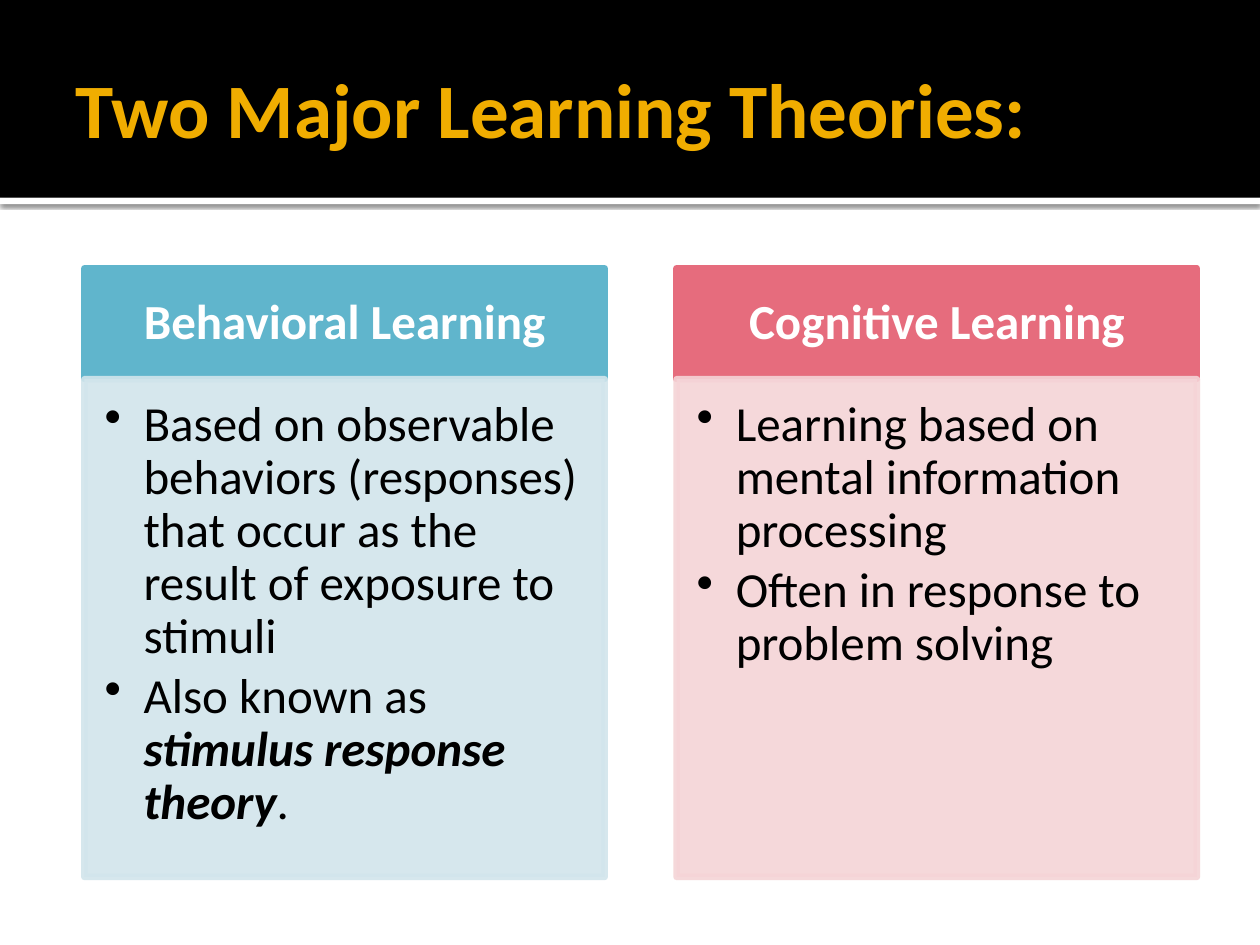
from dataclasses import dataclass

from lxml.etree import SubElement
from pptx import Presentation
from pptx.dml.color import RGBColor
from pptx.enum.shapes import MSO_SHAPE as Shape
from pptx.enum.text import MSO_ANCHOR as Anchor, PP_ALIGN as Align
from pptx.oxml.ns import qn
from pptx.util import Inches, Pt

FONT = "Calibri"
COLUMN_W, COLUMN_GAP = 4.13, 0.57
LEFT, HEAD_TOP, HEAD_H, BODY_H = 0.67, 2.13, 0.88, 3.95


@dataclass
class Run:
    text: str
    strong: bool = False


@dataclass
class Column:
    heading: str
    color: str
    tint: str
    bullets: list[list[Run]]


COLUMNS = [
    Column("Behavioral Learning", "60B5CC", "D2E5EC", [
        [Run("Based on observable behaviors (responses) that "
             "occur as the result of exposure to stimuli")],
        [Run("Also known as "), Run("stimulus response theory", True), Run(".")],
    ]),
    Column("Cognitive Learning", "E66C7D", "F5D4D7", [
        [Run("Learning based on mental information processing")],
        [Run("Often in response to problem solving")],
    ]),
]


def rgb(color: str) -> RGBColor:
    return RGBColor.from_string(color)


def add_rect(s, x: float, y: float, w: float, h: float, fill: str,
             line_pt: float = 0, opacity: int = 100):
    sp = s.shapes.add_shape(Shape.RECTANGLE, Inches(x), Inches(y), Inches(w), Inches(h))
    sp.shadow.inherit = False
    sp.fill.solid()
    sp.fill.fore_color.rgb = rgb(fill)
    if line_pt:
        sp.line.color.rgb = rgb(fill)
        sp.line.width = Pt(line_pt)
    else:
        sp.line.fill.background()
    if opacity < 100:
        for color in list(sp._element.spPr.iter(qn("a:srgbClr"))):
            SubElement(color, qn("a:alpha"), val=str(opacity * 1000))
    return sp


def add_shadow(sp) -> None:
    effects = sp._element.spPr.find(qn("a:effectLst"))
    shadow = SubElement(effects, qn("a:outerShdw"), blurRad=str(Pt(2.5)),
                        dist=str(Pt(0.8)), dir="5400000", rotWithShape="0")
    color = SubElement(shadow, qn("a:srgbClr"), val="000000")
    SubElement(color, qn("a:alpha"), val="60000")


def set_frame(sp, insets: tuple[float, float, float, float], anchor: Anchor):
    tf = sp.text_frame
    tf.word_wrap = True
    tf.vertical_anchor = anchor
    tf.margin_left, tf.margin_top, tf.margin_right, tf.margin_bottom = map(Inches, insets)
    return tf


def add_run(p, text: str, *, size: float = 28, color: str = "000000",
            bold: bool = False, italic: bool = False) -> None:
    r = p.add_run()
    r.text = text
    r.font.name, r.font.size = FONT, Pt(size)
    r.font.bold, r.font.italic = bold, italic
    r.font.color.rgb = rgb(color)


def add_bullet(p, runs: list[Run]) -> None:
    p.level = 1
    p.alignment = Align.LEFT
    p.line_spacing = 0.9
    p.space_after = Pt(4.2)
    pPr = p._p.get_or_add_pPr()
    pPr.set("marL", str(Inches(0.31)))
    pPr.set("indent", str(-Inches(0.31)))
    SubElement(pPr, qn("a:buChar"), char="•")
    for run in runs:
        add_run(p, run.text, bold=run.strong, italic=run.strong)


def add_column(s, x: float, column: Column) -> None:
    # Heading
    head = add_rect(s, x, HEAD_TOP, COLUMN_W, HEAD_H, column.color, 3.78)
    p = set_frame(head, (0.22, 0.12, 0.22, 0.12), Anchor.MIDDLE).paragraphs[0]
    p.alignment = Align.CENTER
    p.line_spacing = 0.9
    add_run(p, column.heading, color="FFFFFF", bold=True)

    # Bulleted body
    body = add_rect(s, x, HEAD_TOP + HEAD_H, COLUMN_W, BODY_H, column.tint, 3.78, 90)
    tf = set_frame(body, (0.16, 0.16, 0.22, 0.24), Anchor.TOP)
    for i, runs in enumerate(column.bullets):
        add_bullet(tf.add_paragraph() if i else tf.paragraphs[0], runs)


def main() -> None:
    prs = Presentation()
    prs.slide_width, prs.slide_height = Inches(10), Inches(7.5)
    s = prs.slides.add_slide(prs.slide_layouts[6])

    # Title band
    add_shadow(add_rect(s, 0, 1.57, 10, 0.05, "FFFFFF"))
    add_rect(s, 0, 0, 10, 1.57, "000000")
    title = s.shapes.add_textbox(Inches(0.5), Inches(0.17), Inches(9), Inches(1.37))
    tf = set_frame(title, (0.1, 0.05, 0.05, 0.05), Anchor.MIDDLE)
    add_run(tf.paragraphs[0], "Two Major Learning Theories:",
            size=44, color="F0AD00", bold=True)

    # Theory columns
    for i, column in enumerate(COLUMNS):
        add_column(s, LEFT + i * (COLUMN_W + COLUMN_GAP), column)

    prs.save("out.pptx")


if __name__ == "__main__":
    main()
